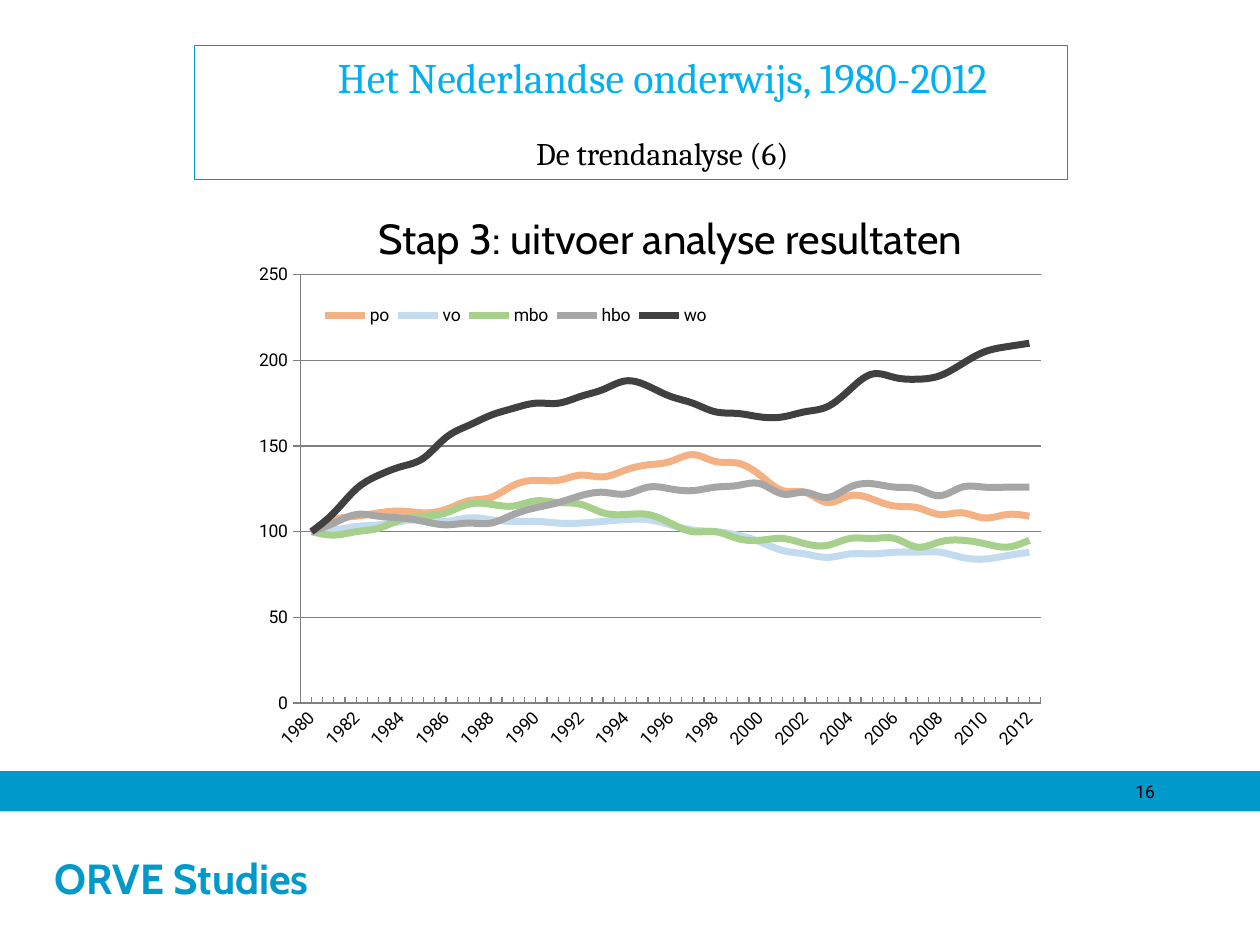
"""Builds the slide on trends in Dutch education, 1980-2012."""
from typing import NamedTuple

from lxml.etree import SubElement
from pptx import Presentation
from pptx.chart.data import CategoryChartData
from pptx.dml.color import RGBColor
from pptx.enum.chart import XL_CHART_TYPE as ChartType, XL_LEGEND_POSITION as LegendPosition
from pptx.enum.chart import XL_MARKER_STYLE as MarkerStyle, XL_TICK_MARK as TickMark
from pptx.enum.shapes import MSO_SHAPE as ShapeType
from pptx.enum.text import MSO_ANCHOR as Anchor, MSO_AUTO_SIZE as AutoSize, PP_ALIGN as Align
from pptx.oxml import parse_xml
from pptx.oxml.ns import nsdecls, qn
from pptx.util import Pt

BLUE = RGBColor(0x00, 0x99, 0xCC)
BRIGHT_BLUE = RGBColor(0x00, 0xB0, 0xF0)
BLACK = RGBColor(0x00, 0x00, 0x00)
WHITE = RGBColor(0xFF, 0xFF, 0xFF)
GRAY = RGBColor(0x80, 0x80, 0x80)
ORANGE = RGBColor(0xF4, 0xB1, 0x83)
PALE_BLUE = RGBColor(0xC3, 0xDB, 0xEF)
GREEN = RGBColor(0xA8, 0xD0, 0x8D)
LIGHT_GRAY = RGBColor(0xA6, 0xA6, 0xA6)
DARK_GRAY = RGBColor(0x40, 0x40, 0x40)


class Box(NamedTuple):
    left: float
    top: float
    width: float
    height: float

    def lengths(self) -> list:
        return [Pt(value) for value in self]


class Band(NamedTuple):
    box: Box
    color: RGBColor


class Trend(NamedTuple):
    name: str
    color: RGBColor
    values: list


BANDS = [
    Band(Box(0, 458, 720, 22), BLUE),
    Band(Box(0, 463.7, 720, 76.3), WHITE),
    Band(Box(0, 440.7, 720, 22.6), BLUE),
]
YEARS = [str(year) for year in range(1980, 2013)]
TRENDS = [
    Trend("po", ORANGE, [
        100, 107, 109, 111, 112, 111, 113, 118, 120, 127, 130, 130, 133, 132, 136, 139, 141,
        145, 141, 140, 133, 124, 123, 117, 121, 119, 115, 114, 110, 111, 108, 110, 109]),
    Trend("vo", PALE_BLUE, [
        100, 101, 103, 104, 106, 107, 106, 108, 107, 106, 106, 105, 105, 106, 107, 107, 104,
        101, 100, 98, 94, 89, 87, 85, 87, 87, 88, 88, 88, 85, 84, 86, 88]),
    Trend("mbo", GREEN, [
        100, 98, 100, 102, 107, 109, 111, 116, 116, 115, 118, 117, 116, 111, 110, 110, 105,
        100, 100, 96, 95, 96, 93, 92, 96, 96, 96, 91, 94, 95, 93, 91, 95]),
    Trend("hbo", LIGHT_GRAY, [
        100, 105, 110, 109, 108, 106, 104, 105, 105, 110, 114, 117, 121, 123, 122, 126, 125,
        124, 126, 127, 128, 122, 123, 120, 126, 128, 126, 125, 121, 126, 126, 126, 126]),
    Trend("wo", DARK_GRAY, [
        100, 111, 125, 133, 138, 143, 155, 162, 168, 172, 175, 175, 179, 183, 188, 185, 179,
        175, 170, 169, 167, 167, 170, 173, 183, 192, 190, 189, 191, 198, 205, 208, 210]),
]


def write(paragraph, text: str, *, size: float, font: str, color=BLACK, bold=False,
          align=Align.LEFT, indent=0, space_after=0) -> None:
    """Put formatted text in a paragraph."""
    paragraph.alignment = align
    paragraph.space_after = Pt(space_after)
    if indent:
        properties = paragraph._p.get_or_add_pPr()
        properties.set("marL", str(Pt(indent)))
        properties.set("indent", "0")
    run = paragraph.add_run()
    run.text = text
    run.font.size = Pt(size)
    run.font.name = font
    run.font.bold = bold
    run.font.color.rgb = color


def add_band(slide, band: Band):
    """Draw a filled footer band."""
    shape = slide.shapes.add_shape(ShapeType.RECTANGLE, *band.box.lengths())
    shape.shadow.inherit = False
    shape.fill.solid()
    shape.fill.fore_color.rgb = band.color
    shape.line.fill.background()
    return shape


def add_label(slide, box: Box, text: str, **text_format) -> None:
    """Add a one-line text box."""
    frame = slide.shapes.add_textbox(*box.lengths()).text_frame
    frame.word_wrap = True
    frame.margin_left = frame.margin_right = 0
    write(frame.paragraphs[0], text, **text_format)


def format_title(title) -> None:
    """Turn the title placeholder into the outlined heading box."""
    title.left, title.top, title.width, title.height = Box(111, 26, 499, 76.5).lengths()
    title.line.color.rgb = BLUE
    title.line.width = Pt(0.75)
    frame = title.text_frame
    frame.auto_size = AutoSize.NONE
    frame.vertical_anchor = Anchor.TOP
    shared = dict(font="Cambria", align=Align.CENTER, indent=36, space_after=18)
    write(frame.paragraphs[0], "Het Nederlandse onderwijs, 1980-2012",
          size=24, color=BRIGHT_BLUE, **shared)
    write(frame.add_paragraph(), "De trendanalyse (6)", size=18, **shared)


def set_layout(element, box: Box, inner=False) -> None:
    """Place a chart part by fractions of the chart area."""
    for old in element.findall(qn("c:layout")):
        element.remove(old)
    layout = parse_xml(f"<c:layout {nsdecls('c')}/>")
    manual = SubElement(layout, qn("c:manualLayout"))
    settings = [("layoutTarget", "inner")] if inner else []
    settings += [("xMode", "edge"), ("yMode", "edge")]
    settings += zip("xywh", map(str, box))
    for name, value in settings:
        SubElement(manual, qn(f"c:{name}")).set("val", value)
    position = element.find(qn("c:legendPos"))
    element.insert(0 if position is None else 1, layout)


def format_axes(chart) -> None:
    """Set scale, grid, ticks and slanted year labels."""
    value_axis, year_axis = chart.value_axis, chart.category_axis
    value_axis.minimum_scale, value_axis.maximum_scale = 0, 250
    value_axis.major_unit = 50
    value_axis.major_tick_mark = TickMark.OUTSIDE
    value_axis.major_gridlines.format.line.color.rgb = GRAY
    value_axis.major_gridlines.format.line.width = Pt(0.75)
    year_axis.major_tick_mark = TickMark.NONE
    year_axis.minor_tick_mark = TickMark.INSIDE
    for axis in (value_axis, year_axis):
        axis.format.line.color.rgb = GRAY
        axis.format.line.width = Pt(0.75)
        axis.tick_labels.font.size = Pt(10)
    element = year_axis._element
    body = element.find(qn("c:txPr")).find(qn("a:bodyPr"))
    body.set("rot", "-2700000")
    body.set("vert", "horz")
    skip = parse_xml(f'<c:tickLblSkip {nsdecls("c")} val="2"/>')
    element.find(qn("c:noMultiLvlLbl")).addprevious(skip)


def add_trend_chart(slide, box: Box) -> None:
    """Draw the smoothed trend lines."""
    data = CategoryChartData()
    data.categories = YEARS
    for trend in TRENDS:
        data.add_series(trend.name, trend.values)
    chart = slide.shapes.add_chart(ChartType.LINE, *box.lengths(), data).chart
    chart.has_title = False
    chart.font.name = "Roboto"
    chart.font.size = Pt(10)
    chart.font.color.rgb = BLACK
    chart.plots[0].vary_by_categories = False
    for series, trend in zip(chart.plots[0].series, TRENDS):
        series.smooth = True
        series.marker.style = MarkerStyle.NONE
        series.format.line.color.rgb = trend.color
        series.format.line.width = Pt(4)
    format_axes(chart)
    chart.has_legend = True
    chart.legend.position = LegendPosition.RIGHT
    chart.legend.include_in_layout = False
    set_layout(chart.legend._element, Box(0.09, 0.09, 0.49, 0.06))
    set_layout(chart._chartSpace.chart.plotArea, Box(0.07, 0.04, 0.91, 0.85), inner=True)
    chart.legend._element.find(qn("c:overlay")).set("val", "1")


def main() -> None:
    """Build and save the slide."""
    presentation = Presentation()
    presentation.slide_width, presentation.slide_height = Pt(720), Pt(540)
    slide = presentation.slides.add_slide(presentation.slide_layouts[5])
    footer = [add_band(slide, band) for band in BANDS][1].text_frame
    footer.margin_left = Pt(31.4)
    footer.vertical_anchor = Anchor.MIDDLE
    write(footer.paragraphs[0], "ORVE Studies", size=24, font="Cabin", color=BLUE, bold=True)
    add_label(slide, Box(510, 443, 150, 18), "16", size=10, font="Roboto", align=Align.RIGHT)
    format_title(slide.shapes.title)
    add_label(slide, Box(196, 118, 374, 36), "Stap 3: uitvoer analyse resultaten",
              size=24, font="Cabin", align=Align.CENTER)
    add_trend_chart(slide, Box(139, 145.5, 465, 288))
    presentation.save("out.pptx")


if __name__ == "__main__":
    main()
